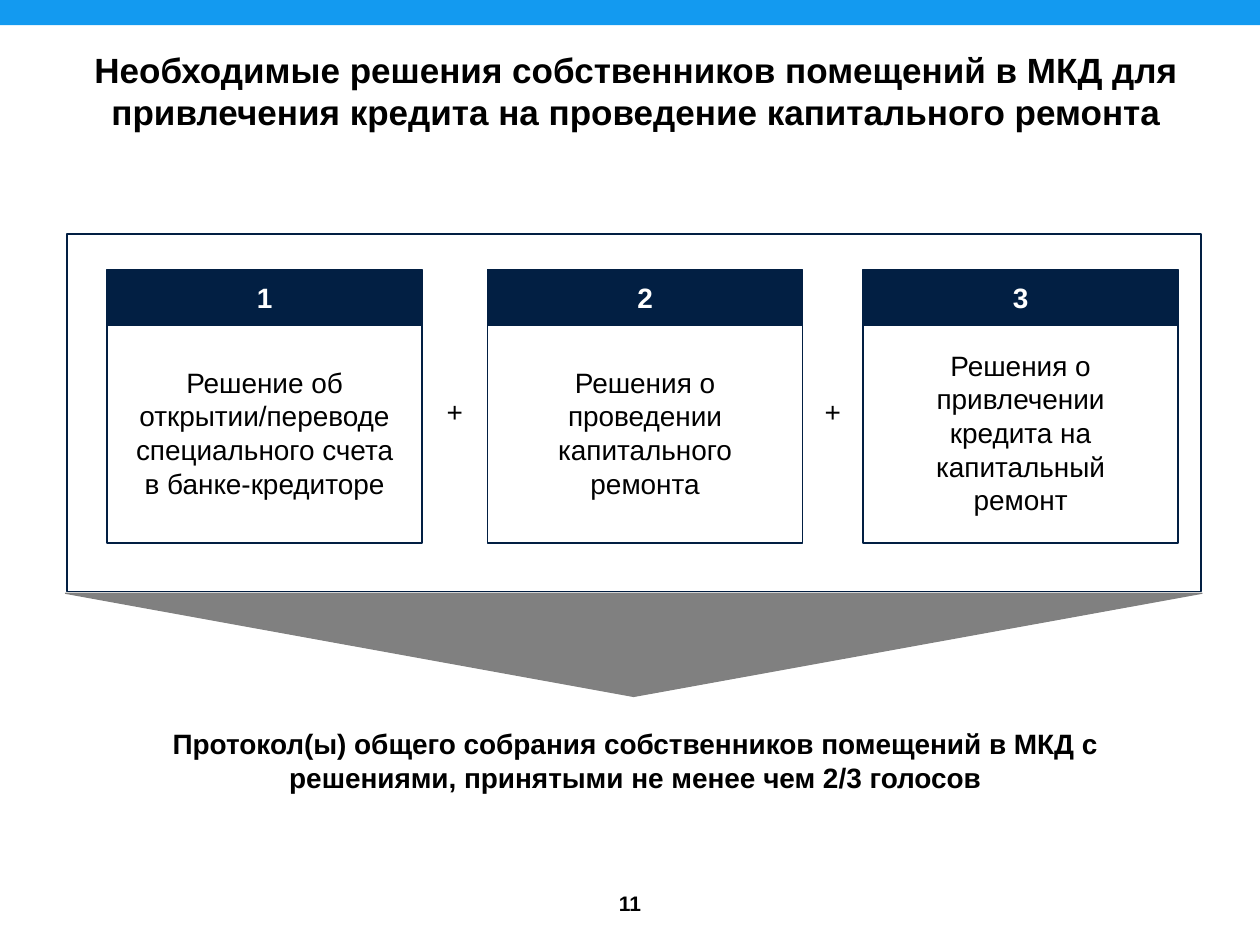
from pptx import Presentation
from pptx.dml.color import RGBColor
from pptx.enum.shapes import MSO_SHAPE
from pptx.enum.text import MSO_ANCHOR, PP_ALIGN
from pptx.util import Cm, Pt

BLACK = RGBColor(0x00, 0x00, 0x00)
WHITE = RGBColor(0xFF, 0xFF, 0xFF)
NAVY = RGBColor(0x02, 0x1F, 0x43)
BLUE = RGBColor(0x13, 0x9A, 0xF0)
GRAY = RGBColor(0x80, 0x80, 0x80)

CARD_WIDTH = 6.35
HEADER_TOP, HEADER_HEIGHT = 5.44, 1.12
BODY_TOP, BODY_HEIGHT = 6.53, 4.42
# Left edge, text, text width and text height of each card
CARDS = [
    (2.16, "Решение об открытии/переводе специального счета в банке-кредиторе", 5.89, 3.0),
    (9.83, "Решения о проведении капитального ремонта", 5.51, 3.0),
    (17.4, "Решения о привлечении кредита на капитальный ремонт", 5.51, 3.68),
]


def write(frame, text, size=16, bold=False, color=BLACK, anchor=MSO_ANCHOR.TOP):
    frame.word_wrap = True
    frame.vertical_anchor = anchor
    paragraph = frame.paragraphs[0]
    paragraph.alignment = PP_ALIGN.CENTER
    run = paragraph.add_run()
    run.text = text
    run.font.name = "Arial"
    run.font.size = Pt(size)
    run.font.bold = bold
    run.font.color.rgb = color


class SlideBuilder:
    def __init__(self, slide):
        self.slide = slide

    def title(self, text, left, top, width, height):
        title = self.slide.shapes.title
        title.left, title.top = Cm(left), Cm(top)
        title.width, title.height = Cm(width), Cm(height)
        write(title.text_frame, text, size=20, bold=True, anchor=MSO_ANCHOR.MIDDLE)

    def shape(self, left, top, width, height, fill=None, line=None, kind=MSO_SHAPE.RECTANGLE):
        shape = self.slide.shapes.add_shape(kind, Cm(left), Cm(top), Cm(width), Cm(height))
        shape.shadow.inherit = False
        if fill is None:
            shape.fill.background()
        else:
            shape.fill.solid()
            shape.fill.fore_color.rgb = fill
        if line is None:
            shape.line.fill.background()
        else:
            shape.line.color.rgb = line
            shape.line.width = Pt(0.75)

    def text(self, text, center_x, center_y, width, height, **style):
        """Add a text box placed by its centre."""
        box = self.slide.shapes.add_textbox(
            Cm(center_x - width / 2), Cm(center_y - height / 2), Cm(width), Cm(height))
        write(box.text_frame, text, **style)

    def card(self, number, left, text, text_width, text_height):
        center = left + CARD_WIDTH / 2
        self.shape(left, BODY_TOP, CARD_WIDTH, BODY_HEIGHT, WHITE, NAVY)
        self.text(text, center, BODY_TOP + BODY_HEIGHT / 2, text_width, text_height)
        self.shape(left, HEADER_TOP, CARD_WIDTH, HEADER_HEIGHT, NAVY, NAVY)
        self.text(str(number), center, HEADER_TOP + HEADER_HEIGHT / 2, 1.37, 0.94,
                  bold=True, color=WHITE)


def main():
    presentation = Presentation()
    presentation.slide_width, presentation.slide_height = Cm(25.4), Cm(19.05)
    builder = SlideBuilder(presentation.slides.add_slide(presentation.slide_layouts[5]))

    builder.shape(0, 0, 25.4, 0.51, BLUE)
    builder.title("Необходимые решения собственников помещений в МКД для привлечения "
                  "кредита на проведение капитального ремонта", 0, 0.84, 25.65, 1.96)

    builder.shape(1.35, 4.72, 22.86, 7.21, line=NAVY)
    for number, card in enumerate(CARDS, start=1):
        builder.card(number, *card)
    for before, after in zip(CARDS, CARDS[1:]):
        gap_center = (before[0] + CARD_WIDTH + after[0]) / 2
        builder.text("+", gap_center, 8.29, 1.14, 0.94)

    builder.shape(1.32, 11.96, 22.91, 2.08, GRAY, GRAY, MSO_SHAPE.FLOWCHART_MERGE)
    builder.text("Протокол(ы) общего собрания собственников помещений в МКД с "
                 "решениями, принятыми не менее чем 2/3 голосов",
                 12.81, 15.34, 20.4, 1.63, bold=True)
    builder.text("11", 12.7, 18.2, 2.24, 0.99, size=12, bold=True, anchor=MSO_ANCHOR.MIDDLE)

    presentation.save("out.pptx")


if __name__ == "__main__":
    main()
